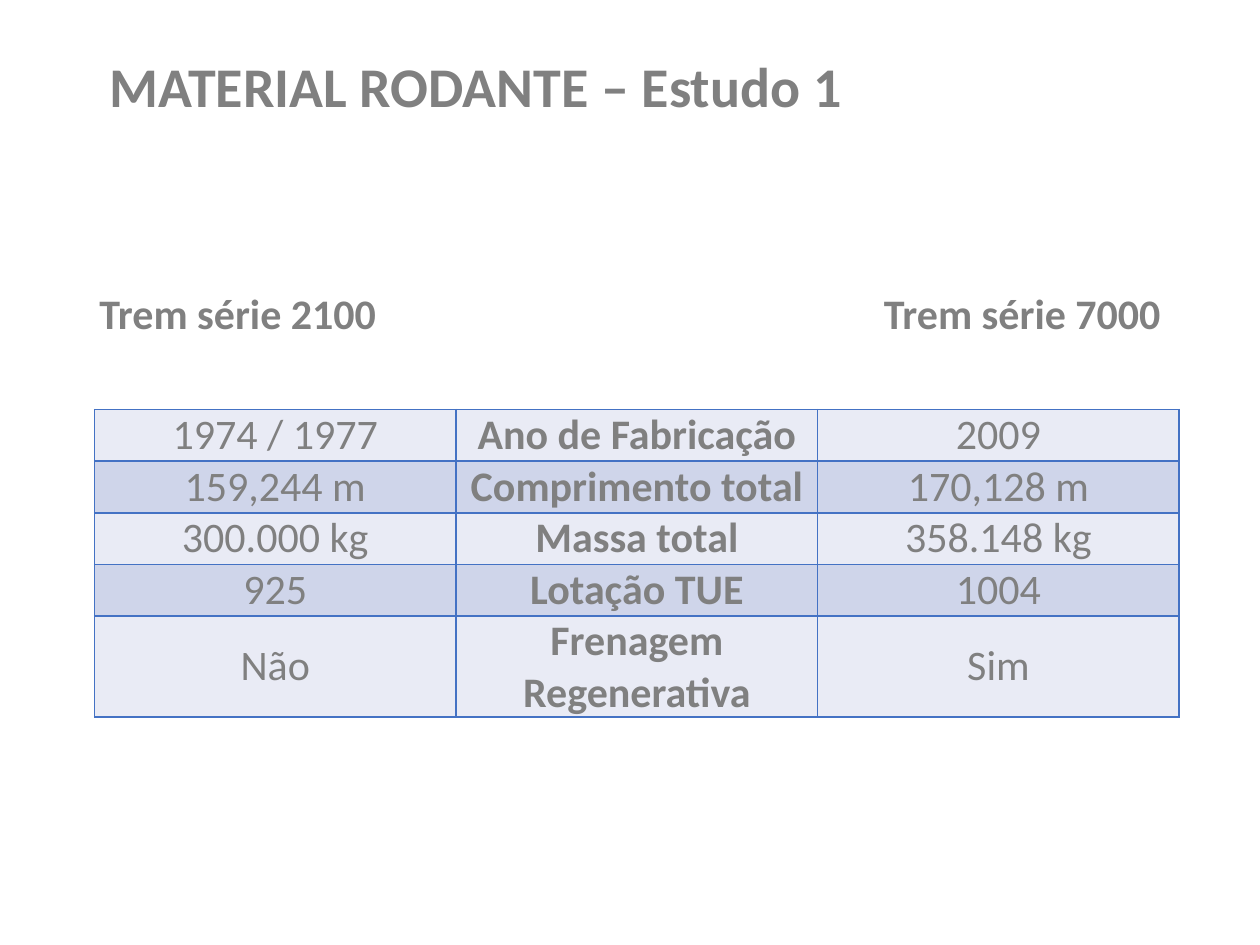
from lxml import etree
from pptx import Presentation
from pptx.dml.color import RGBColor
from pptx.enum.text import MSO_ANCHOR, MSO_AUTO_SIZE, PP_ALIGN
from pptx.oxml.ns import qn
from pptx.util import Inches, Pt

LEFT, MID, RIGHT = PP_ALIGN.LEFT, PP_ALIGN.CENTER, PP_ALIGN.RIGHT
CENTER, BOTTOM = MSO_ANCHOR.MIDDLE, MSO_ANCHOR.BOTTOM
FIXED = MSO_AUTO_SIZE.NONE

COLORS = {"text": "808080", "light": "E9EBF5", "dark": "CFD5EA", "line": "4472C4"}


def style(para, size, bold, align):
    para.alignment = align
    for run in para.runs:
        font = run.font
        font.name = "Calibri"
        font.size = Pt(size)
        font.bold = bold
        font.color.rgb = RGBColor.from_string(COLORS["text"])


def border(cell):
    props = cell._tc.get_or_add_tcPr()
    for n, side in enumerate(("lnL", "lnR", "lnT", "lnB")):
        line = etree.Element(qn("a:" + side), w=str(Pt(1)))
        fill = etree.SubElement(line, qn("a:solidFill"))
        etree.SubElement(fill, qn("a:srgbClr"), val=COLORS["line"])
        props.insert(n, line)


prs = Presentation()
prs.slide_width, prs.slide_height = Inches(10), Inches(7.5)
slide = prs.slides.add_slide(prs.slide_layouts[5])

title = slide.shapes.title
title.left, title.top = Inches(0.77), Inches(0.39)
title.width, title.height = Inches(7.73), Inches(0.64)
frame = title.text_frame
frame.text = "MATERIAL RODANTE – Estudo 1"
frame.auto_size = FIXED
frame.vertical_anchor = CENTER
frame.paragraphs[0].line_spacing = 0.9
style(frame.paragraphs[0], 32, True, LEFT)

heads = [
    ("Trem série 2100", 0.69, 4.23, LEFT),
    ("Trem série 7000", 5.06, 4.25, RIGHT),
]
for text, left, width, align in heads:
    box = slide.shapes.add_textbox(Inches(left), Inches(1.84), Inches(width), Inches(0.9))
    frame = box.text_frame
    frame.text = text
    frame.word_wrap = True
    frame.vertical_anchor = BOTTOM
    frame.paragraphs[0].line_spacing = 0.9
    style(frame.paragraphs[0], 24, True, align)

rows = [
    ("1974 / 1977", "Ano de Fabricação", "2009"),
    ("159,244 m", "Comprimento total", "170,128 m"),
    ("300.000 kg", "Massa total", "358.148 kg"),
    ("925", "Lotação TUE", "1004"),
    ("Não", "Frenagem Regenerativa", "Sim"),
]
table = slide.shapes.add_table(
    len(rows), 3, Inches(0.75), Inches(3.25), Inches(8.62), Inches(2.05)
).table
for col in table.columns:
    col.width = Inches(2.87)
for r, row in enumerate(rows):
    table.rows[r].height = Inches(0.41)
    shade = COLORS["dark" if r % 2 else "light"]
    for c, text in enumerate(row):
        cell = table.cell(r, c)
        cell.text = text
        cell.vertical_anchor = CENTER
        cell.margin_left = cell.margin_right = Inches(0.07)
        cell.margin_top = cell.margin_bottom = 0
        cell.fill.solid()
        cell.fill.fore_color.rgb = RGBColor.from_string(shade)
        border(cell)
        style(cell.text_frame.paragraphs[0], 24, c == 1, MID)

prs.save("out.pptx")
